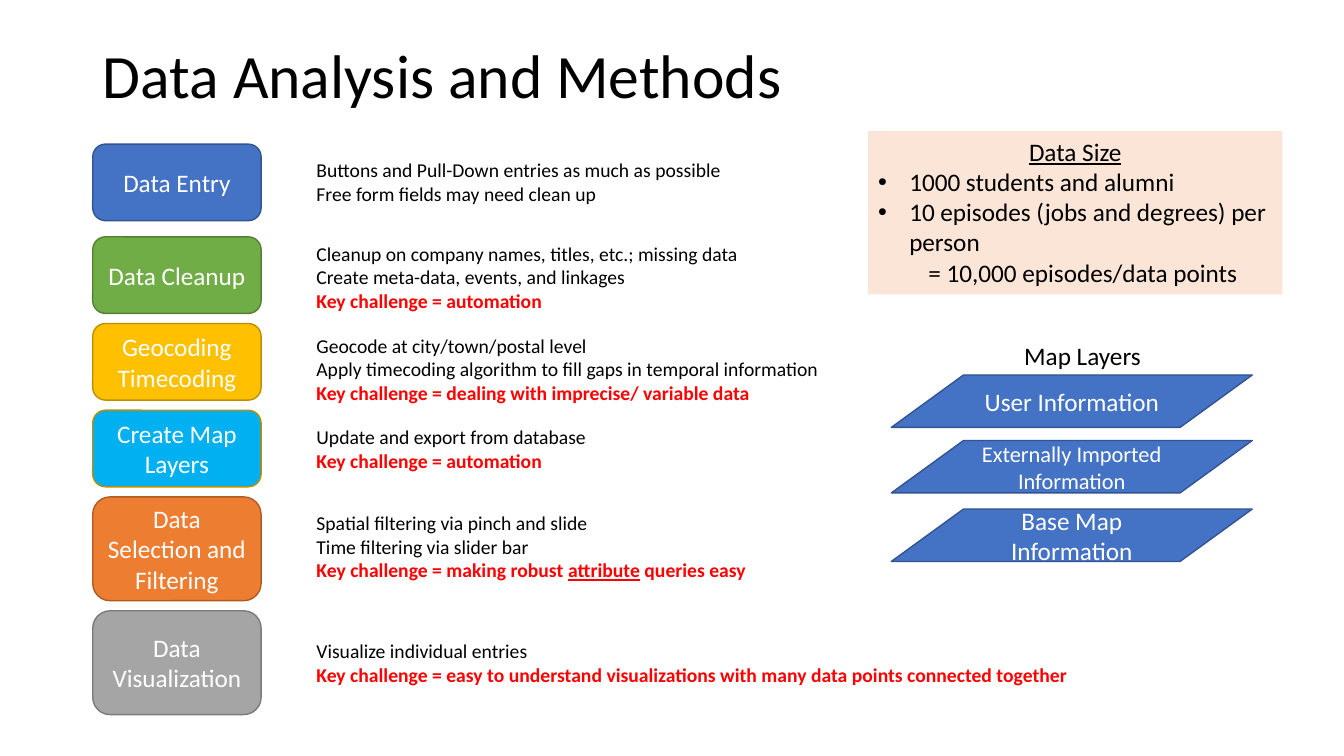
from dataclasses import dataclass

from pptx import Presentation
from pptx.dml.color import RGBColor
from pptx.enum.shapes import MSO_SHAPE as Preset
from pptx.enum.text import MSO_ANCHOR as Anchor, MSO_AUTO_SIZE as AutoSize, PP_ALIGN as Align
from pptx.oxml.ns import qn
from pptx.util import Inches, Pt


@dataclass(frozen=True)
class Theme:
    font: str = "Calibri"
    title_size: int = 44
    body_size: int = 18
    small_size: int = 16
    note_size: int = 14
    black: str = "000000"
    white: str = "FFFFFF"
    challenge: str = "FF0000"
    panel: str = "FBE5D6"
    blue: str = "4472C4"
    blue_line: str = "325491"
    green: str = "70AD47"
    green_line: str = "538035"
    gold: str = "FFC000"
    gold_line: str = "BD8E00"
    sky: str = "00B0F0"
    orange: str = "ED7D31"
    orange_line: str = "AF5C24"
    gray: str = "A5A5A5"
    gray_line: str = "7A7A7A"


THEME = Theme()

# Label lines, top, height, fill, outline
STEPS = [
    (["Data Entry"], 1.43, 0.76, THEME.blue, THEME.blue_line),
    (["Data Cleanup"], 2.35, 0.76, THEME.green, THEME.green_line),
    (["Geocoding", "Timecoding"], 3.21, 0.76, THEME.gold, THEME.gold_line),
    (["Create Map Layers"], 4.07, 0.76, THEME.sky, THEME.gold_line),
    (["Data Selection and Filtering"], 4.93, 1.03, THEME.orange, THEME.orange_line),
    (["Data Visualization"], 6.06, 1.03, THEME.gray, THEME.gray_line),
]

# Top, width, plain lines, key challenge as runs (every second run underlined)
NOTES = [
    (1.52, 4.25, ["Buttons and Pull-Down entries as much as possible",
                  "Free form fields may need clean up"], []),
    (2.35, 4.47, ["Cleanup on company names, titles, etc.; missing data",
                  "Create meta-data, events, and linkages"],
     ["Key challenge = automation"]),
    (3.26, 5.23, ["Geocode at city/town/postal level",
                  "Apply timecoding algorithm to fill gaps in temporal information"],
     ["Key challenge = dealing with imprecise/ variable data"]),
    (4.17, 2.9, ["Update and export from database"], ["Key challenge = automation"]),
    (5.02, 4.49, ["Spatial filtering via pinch and slide", "Time filtering via slider bar"],
     ["Key challenge = making robust ", "attribute", " queries easy"]),
    (6.29, 7.7, ["Visualize individual entries"],
     ["Key challenge = easy to understand visualizations with many data points "
      "connected together"]),
]

LAYERS = [
    ("User Information", 3.72, THEME.body_size),
    ("Externally Imported Information", 4.37, THEME.small_size),
    ("Base Map Information", 5.05, THEME.body_size),
]


def write(paragraph, text, size=THEME.body_size, color=THEME.black, bold=False,
          underline=False, align=Align.LEFT):
    """Append a formatted run to the paragraph."""
    paragraph.alignment = align
    run = paragraph.add_run()
    run.text = text
    run.font.name = THEME.font
    run.font.size = Pt(size)
    run.font.bold = bold
    run.font.underline = underline
    run.font.color.rgb = RGBColor.from_string(color)


def next_paragraph(frame):
    """Return the unused first paragraph, or a new one."""
    first = frame.paragraphs[0]
    return frame.add_paragraph() if first.runs else first


def indent(paragraph, left, hanging=0, bullet=None):
    properties = paragraph._p.get_or_add_pPr()
    properties.set("marL", str(Inches(left)))
    properties.set("indent", str(-Inches(hanging)))
    if bullet:
        font = properties.makeelement(qn("a:buFont"), {"typeface": "Arial"})
        mark = properties.makeelement(qn("a:buChar"), {"char": bullet})
        properties.extend([font, mark])


def add_block(slide, preset, box, fill, outline=None):
    shape = slide.shapes.add_shape(preset, *map(Inches, box))
    shape.shadow.inherit = False
    shape.fill.solid()
    shape.fill.fore_color.rgb = RGBColor.from_string(fill)
    if outline:
        shape.line.color.rgb = RGBColor.from_string(outline)
        shape.line.width = Pt(1)
    else:
        shape.line.fill.background()
    shape.text_frame.word_wrap = True
    return shape


def add_labelled_block(slide, preset, box, lines, fill, outline, size=THEME.body_size):
    frame = add_block(slide, preset, box, fill, outline).text_frame
    frame.vertical_anchor = Anchor.MIDDLE
    for line in lines:
        write(next_paragraph(frame), line, size=size, color=THEME.white, align=Align.CENTER)


def add_text_frame(slide, box):
    frame = slide.shapes.add_textbox(*map(Inches, box)).text_frame
    frame.word_wrap = False
    frame.auto_size = AutoSize.SHAPE_TO_FIT_TEXT
    return frame


def add_title(slide, text):
    title = slide.shapes.title
    title.left, title.top, title.width, title.height = map(Inches, (0.92, 0.4, 11.5, 0.76))
    frame = title.text_frame
    frame.auto_size = AutoSize.NONE
    frame.vertical_anchor = Anchor.MIDDLE
    paragraph = frame.paragraphs[0]
    paragraph.line_spacing = 0.9
    write(paragraph, text, size=THEME.title_size)


def add_note(slide, top, width, lines, challenge):
    height = 0.81 if len(lines) + bool(challenge) == 3 else 0.57
    frame = add_text_frame(slide, (3.04, top, width, height))
    for line in lines:
        write(next_paragraph(frame), line, size=THEME.note_size)
    if challenge:
        paragraph = next_paragraph(frame)
        for index, text in enumerate(challenge):
            write(paragraph, text, size=THEME.note_size, color=THEME.challenge,
                  bold=True, underline=index % 2 == 1)


def add_data_size(slide):
    frame = add_block(slide, Preset.RECTANGLE, (8.61, 1.3, 4.11, 1.62), THEME.panel).text_frame
    frame.vertical_anchor = Anchor.TOP
    frame.auto_size = AutoSize.SHAPE_TO_FIT_TEXT
    write(next_paragraph(frame), "Data Size", underline=True, align=Align.CENTER)
    for text in ("1000 students and alumni", "10 episodes (jobs and degrees) per person"):
        paragraph = next_paragraph(frame)
        indent(paragraph, 0.31, hanging=0.31, bullet="•")
        write(paragraph, text)
    total = next_paragraph(frame)
    total.level = 1
    indent(total, 0.5)
    write(total, "= 10,000 episodes/data points")


def main():
    presentation = Presentation()
    presentation.slide_width = Inches(13.33)
    presentation.slide_height = Inches(7.5)
    slide = presentation.slides.add_slide(presentation.slide_layouts.get_by_name("Title Only"))

    add_title(slide, "Data Analysis and Methods")
    for lines, top, height, fill, outline in STEPS:
        add_labelled_block(slide, Preset.ROUNDED_RECTANGLE, (0.92, top, 1.67, height),
                           lines, fill, outline)
    add_data_size(slide)
    for note in NOTES:
        add_note(slide, *note)
    for label, top, size in LAYERS:
        add_labelled_block(slide, Preset.FLOWCHART_DATA, (8.84, top, 3.58, 0.52),
                           [label], THEME.blue, THEME.blue_line, size=size)
    write(next_paragraph(add_text_frame(slide, (10.06, 3.33, 1.37, 0.4))), "Map Layers")

    presentation.save("out.pptx")


if __name__ == "__main__":
    main()
